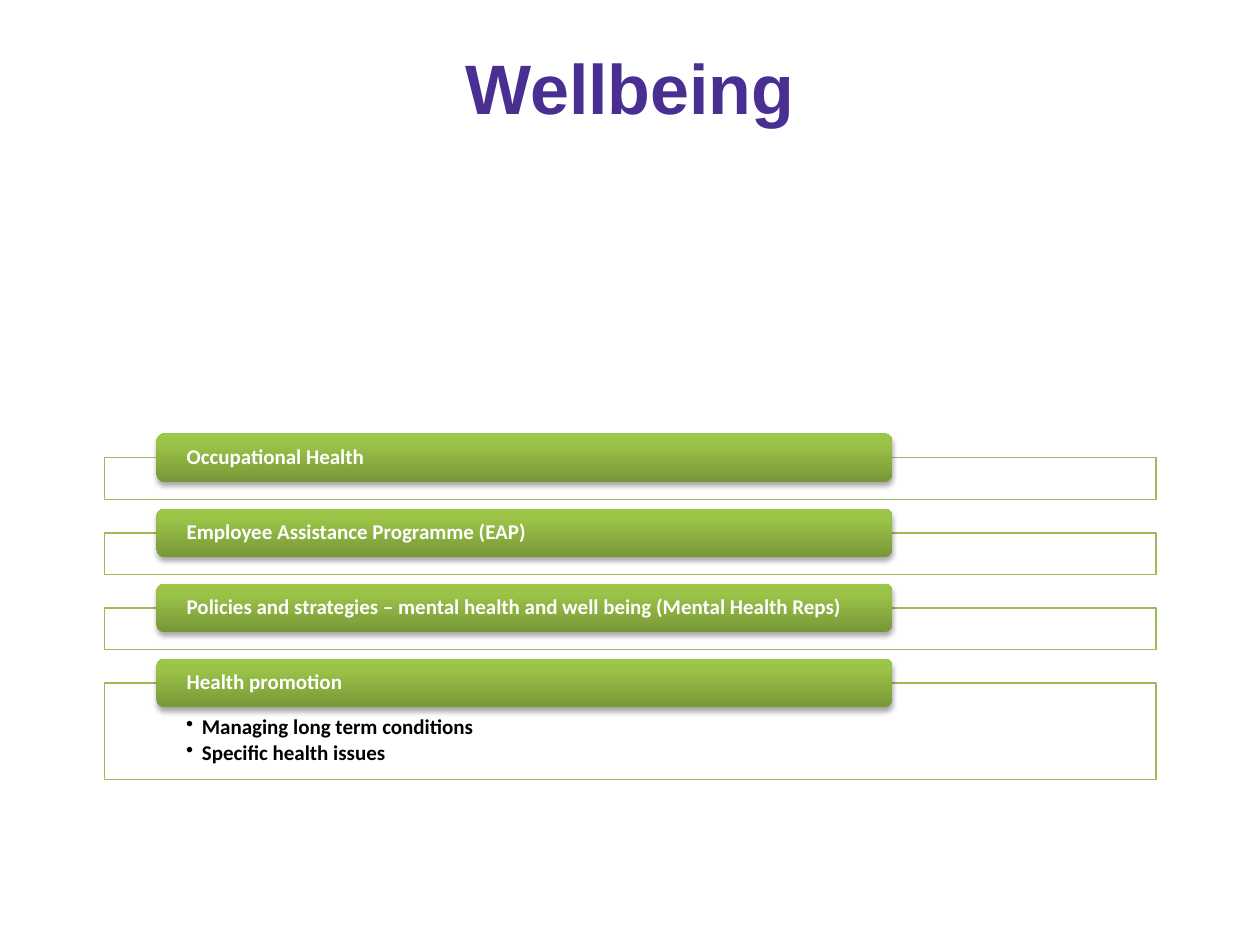
import pptx
import pptx.dml.color
import pptx.enum.shapes
import pptx.enum.text
import pptx.oxml
import pptx.oxml.ns
import pptx.util

Pt = pptx.util.Pt
RGBColor = pptx.dml.color.RGBColor
MSO_SHAPE = pptx.enum.shapes.MSO_SHAPE
ANCHOR = pptx.enum.text.MSO_ANCHOR
ALIGN = pptx.enum.text.PP_ALIGN
qn = pptx.oxml.ns.qn

TITLE = "Wellbeing"
TOPICS = [
    ("Occupational Health", []),
    ("Employee Assistance Programme (EAP)", []),
    ("Policies and strategies – mental health and well being (Mental Health Reps)", []),
    ("Health promotion", ["Managing long term conditions", "Specific health issues"]),
]

PURPLE = RGBColor(0x49, 0x2F, 0x92)
GREEN = RGBColor(0x9B, 0xBB, 0x59)
WHITE = RGBColor(0xFF, 0xFF, 0xFF)
BLACK = RGBColor(0, 0, 0)
BAR_STOPS = [
    (0, RGBColor(0x77, 0x97, 0x37)),
    (80, RGBColor(0x9B, 0xC3, 0x48)),
    (100, RGBColor(0x9D, 0xC7, 0x46)),
]

FIRST_BAR_TOP, PITCH = 247.7, 42.9
BAR_LEFT, BAR_WIDTH, BAR_HEIGHT = 89.4, 420.4, 27.9
FRAME_LEFT, FRAME_WIDTH = 59.7, 601
FRAME_HEIGHT, LISTED_FRAME_HEIGHT = 23.8, 55


def append_xml(parent, tag, inner="", **attributes):
    listed = "".join(f' {key}="{value}"' for key, value in attributes.items())
    namespace = pptx.oxml.ns.nsdecls("a")
    parent.append(pptx.oxml.parse_xml(f"<a:{tag} {namespace}{listed}>{inner}</a:{tag}>"))


def set_font(paragraph, color, name="Calibri", size=12):
    paragraph.font.name = name
    paragraph.font.size = Pt(size)
    paragraph.font.bold = True
    paragraph.font.color.rgb = color


def set_insets(text, left, top, right, bottom):
    text.word_wrap = True
    text.margin_left, text.margin_top = Pt(left), Pt(top)
    text.margin_right, text.margin_bottom = Pt(right), Pt(bottom)


def add_frame(slide, top, points):
    height = LISTED_FRAME_HEIGHT if points else FRAME_HEIGHT
    frame = slide.shapes.add_shape(
        MSO_SHAPE.RECTANGLE, Pt(FRAME_LEFT), Pt(top), Pt(FRAME_WIDTH), Pt(height))
    frame.shadow.inherit = False
    frame.fill.solid()
    frame.fill.fore_color.rgb = WHITE
    append_xml(frame.fill._xPr.find(".//" + qn("a:srgbClr")), "alpha", val=90000)
    frame.line.color.rgb = GREEN
    frame.line.width = Pt(0.75)
    if not points:
        return
    text = frame.text_frame
    set_insets(text, 46.7, 19.2, 46.7, 6.4)
    text.vertical_anchor = ANCHOR.TOP
    for index, point in enumerate(points):
        paragraph = text.paragraphs[0] if index == 0 else text.add_paragraph()
        paragraph.text = point
        paragraph.level = 1
        paragraph.alignment = ALIGN.LEFT
        paragraph.line_spacing = 0.9
        paragraph.space_after = Pt(1.8)
        properties = paragraph._p.get_or_add_pPr()
        properties.set("marL", str(Pt(9)))
        properties.set("indent", str(-Pt(9)))
        append_xml(properties, "buChar", char="•")
        set_font(paragraph, BLACK)


def add_bar(slide, top, heading):
    bar = slide.shapes.add_shape(
        MSO_SHAPE.ROUNDED_RECTANGLE, Pt(BAR_LEFT), Pt(top), Pt(BAR_WIDTH), Pt(BAR_HEIGHT))
    bar.line.fill.background()
    bar.fill.gradient()
    bar.fill.gradient_angle = 90
    stops = bar._element.spPr.find(".//" + qn("a:gsLst"))
    for stop in list(stops):
        stops.remove(stop)
    for position, color in BAR_STOPS:
        append_xml(stops, "gs", f'<a:srgbClr val="{color}"/>', pos=position * 1000)
    bar.shadow.inherit = False
    append_xml(
        bar._element.spPr.find(qn("a:effectLst")), "outerShdw",
        '<a:srgbClr val="000000"><a:alpha val="35000"/></a:srgbClr>',
        blurRad=Pt(3.1), dist=Pt(1.8), dir=90 * 60000, rotWithShape=0)
    text = bar.text_frame
    set_insets(text, 15.9, 0, 15.9, 0)
    text.vertical_anchor = ANCHOR.MIDDLE
    paragraph = text.paragraphs[0]
    paragraph.text = heading
    paragraph.alignment = ALIGN.LEFT
    paragraph.line_spacing = 0.9
    set_font(paragraph, WHITE)


def main():
    deck = pptx.Presentation()
    deck.slide_width, deck.slide_height = Pt(720), Pt(540)
    slide = deck.slides.add_slide(deck.slide_layouts[5])

    title = slide.shapes.title
    title.left, title.top, title.width, title.height = Pt(36), Pt(21.6), Pt(648), Pt(106.6)
    title.text_frame.vertical_anchor = ANCHOR.TOP
    title.text_frame.text = TITLE
    heading = title.text_frame.paragraphs[0]
    heading.alignment = ALIGN.CENTER
    set_font(heading, PURPLE, "Arial", 40)

    for row, (topic, points) in enumerate(TOPICS):
        bar_top = FIRST_BAR_TOP + row * PITCH
        add_frame(slide, bar_top + BAR_HEIGHT / 2, points)
        add_bar(slide, bar_top, topic)

    deck.save("out.pptx")


if __name__ == "__main__":
    main()
